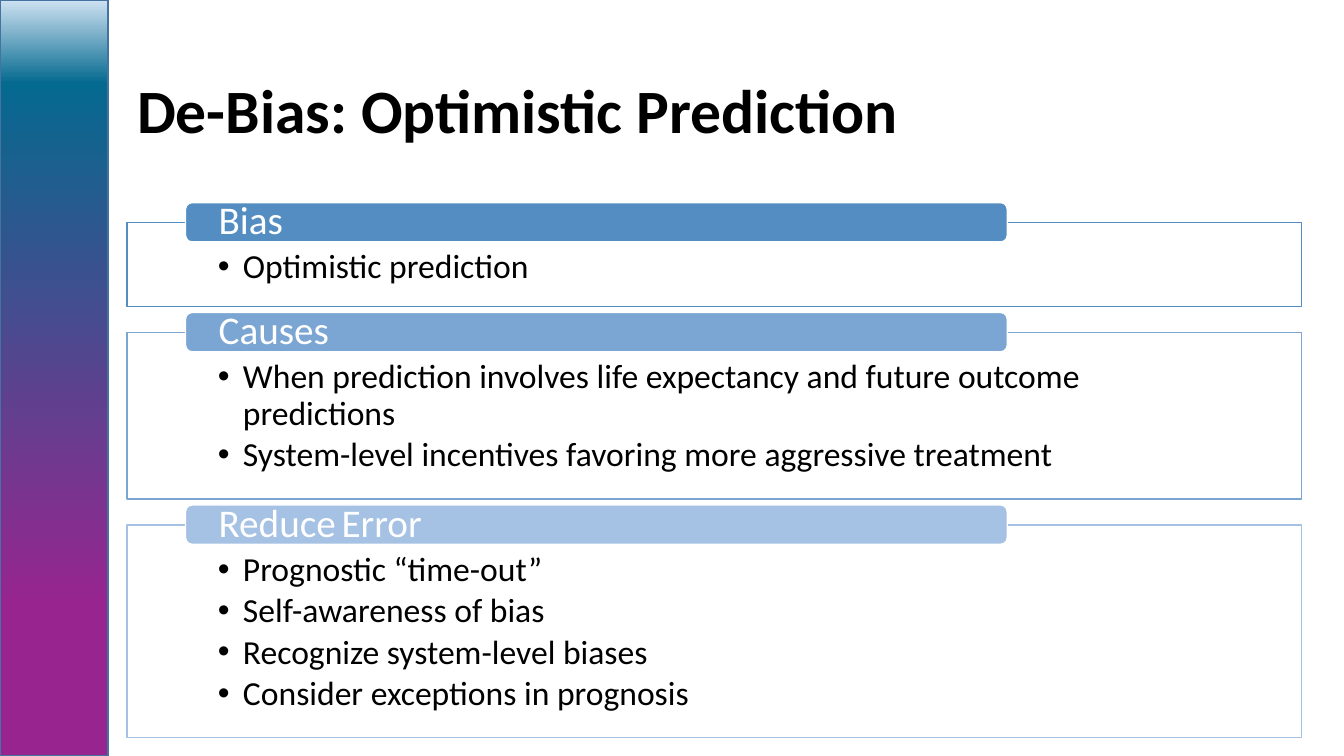
from copy import deepcopy

from lxml import etree
from pptx import Presentation
from pptx.dml.color import RGBColor
from pptx.enum.shapes import MSO_SHAPE
from pptx.enum.text import MSO_ANCHOR, MSO_AUTO_SIZE, PP_ALIGN
from pptx.oxml.ns import qn
from pptx.util import Inches, Pt

RECTANGLE = MSO_SHAPE.RECTANGLE
ROUNDED = MSO_SHAPE.ROUNDED_RECTANGLE
TOP, MIDDLE = MSO_ANCHOR.TOP, MSO_ANCHOR.MIDDLE
LEFT = PP_ALIGN.LEFT
NO_AUTOFIT = MSO_AUTO_SIZE.NONE

FONT = "Calibri"
COLORS = {
    "white": "FFFFFF",
    "black": "000000",
    "sidebar_line": "43739E",
    "bias": "538DC1",
    "causes": "7BA6D3",
    "reduce": "A5C1E3",
}
SIDEBAR_STOPS = [(0.2, "98258F"), (0.89, "056A8F"), (1.0, "CEE1F2")]

PANEL_LEFT, PANEL_WIDTH, PANEL_GAP = 1.26, 11.65, 0.26
FIRST_PANEL_TOP = 2.21
TAB_LEFT, TAB_WIDTH, TAB_HEIGHT, TAB_RISE = 1.84, 8.15, 0.39, 0.2

# Header runs (text, size), colour, panel height, bullets
SECTIONS = [
    ([("Bias", 28)], "bias", 0.83, ["Optimistic prediction"]),
    ([("Causes", 28)], "causes", 1.65, [
        "When prediction involves life expectancy and future outcome predictions",
        "System-level incentives favoring more aggressive treatment",
    ]),
    ([("Reduce", 28), (" ", 18), ("Error", 28)], "reduce", 2.11, [
        "Prognostic “time-out”",
        "Self-awareness of bias",
        "Recognize system-level biases",
        "Consider exceptions in prognosis",
    ]),
]


def rgb(name):
    return RGBColor.from_string(COLORS[name])


def add_run(paragraph, text, size=24, color="black", bold=False):
    paragraph.alignment = LEFT
    paragraph.line_spacing = 0.9
    run = paragraph.add_run()
    run.text = text
    run.font.name = FONT
    run.font.size = Pt(size)
    run.font.bold = bold
    run.font.color.rgb = rgb(color)


def add_bullet(paragraph):
    properties = paragraph._p.get_or_add_pPr()
    properties.set("marL", str(Inches(0.25)))
    properties.set("indent", str(-Inches(0.25)))
    etree.SubElement(properties, qn("a:buFont")).set("typeface", "Arial")
    etree.SubElement(properties, qn("a:buChar")).set("char", "•")


def add_box(slide, kind, left, top, width, height, fill, line):
    shape = slide.shapes.add_shape(
        kind, Inches(left), Inches(top), Inches(width), Inches(height))
    shape.shadow.inherit = False
    shape.fill.solid()
    shape.fill.fore_color.rgb = rgb(fill)
    shape.line.color.rgb = rgb(line)
    shape.line.width = Pt(1)
    return shape


def set_frame(shape, anchor, side, top=0, bottom=0):
    frame = shape.text_frame
    frame.word_wrap = True
    frame.auto_size = NO_AUTOFIT
    frame.vertical_anchor = anchor
    frame.margin_left = frame.margin_right = Inches(side)
    frame.margin_top, frame.margin_bottom = Inches(top), Inches(bottom)
    return frame


def add_sidebar(slide):
    sidebar = add_box(slide, RECTANGLE, 0, 0, 1.07, 7.5, "white", "sidebar_line")
    sidebar.fill.gradient()
    sidebar.fill.gradient_angle = 90
    stop_list = sidebar._element.spPr.find(".//" + qn("a:gsLst"))
    stop_list.append(deepcopy(stop_list[0]))
    for stop, (position, color) in zip(sidebar.fill.gradient_stops, SIDEBAR_STOPS):
        stop.position = position
        stop.color.rgb = RGBColor.from_string(color)


def add_title(slide, text):
    title = slide.shapes.title
    title.left, title.top = Inches(1.26), Inches(0.4)
    title.width, title.height = Inches(11.64), Inches(1.45)
    frame = set_frame(title, MIDDLE, 0.1, 0.05, 0.05)
    add_run(frame.paragraphs[0], text, size=44, bold=True)


def add_section(slide, top, header, color, height, bullets):
    """Draw a bulleted panel with a header tab across its top edge."""
    panel = add_box(slide, RECTANGLE, PANEL_LEFT, top, PANEL_WIDTH, height,
                    "white", color)
    frame = set_frame(panel, TOP, 0.9, 0.27, 0.19)
    for index, text in enumerate(bullets):
        paragraph = frame.add_paragraph() if index else frame.paragraphs[0]
        add_bullet(paragraph)
        paragraph.space_after = Pt(3.6)
        add_run(paragraph, text)

    tab = add_box(slide, ROUNDED, TAB_LEFT, top - TAB_RISE, TAB_WIDTH, TAB_HEIGHT,
                  color, "white")
    paragraph = set_frame(tab, MIDDLE, 0.31).paragraphs[0]
    for text, size in header:
        add_run(paragraph, text, size=size, color="white")


def main():
    presentation = Presentation()
    presentation.slide_width = Inches(13.33)
    presentation.slide_height = Inches(7.5)
    slide = presentation.slides.add_slide(presentation.slide_layouts[5])
    add_sidebar(slide)
    add_title(slide, "De-Bias: Optimistic Prediction")
    top = FIRST_PANEL_TOP
    for header, color, height, bullets in SECTIONS:
        add_section(slide, top, header, color, height, bullets)
        top += height + PANEL_GAP
    presentation.save("out.pptx")


if __name__ == "__main__":
    main()
